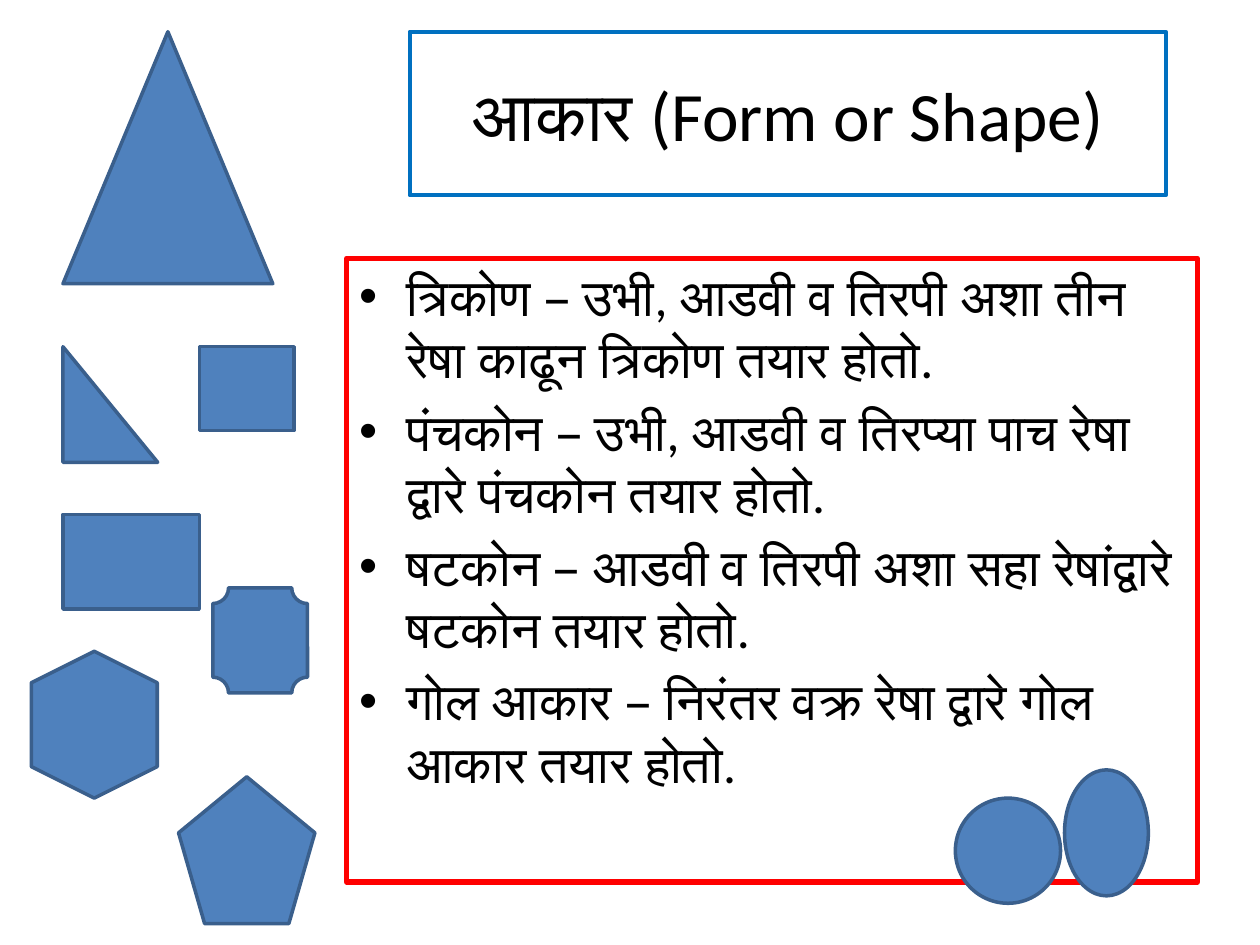
from lxml import etree
from pptx import Presentation
from pptx.dml.color import RGBColor
from pptx.enum import shapes, text
from pptx.oxml.ns import qn
from pptx.util import Cm, Pt

COLOURS = {
    "ink": "000000",
    "title_frame": "0070C0",
    "body_frame": "FF0000",
    "form": "4F81BD",
    "form_edge": "3A5F8C",
}
FONT = "Calibri"
INDENT = Cm(0.95)

HEADING = "आकार (Form or Shape)"
DEFINITIONS = [
    "त्रिकोण – उभी, आडवी व तिरपी अशा तीन रेषा काढून त्रिकोण तयार होतो.",
    "पंचकोन – उभी, आडवी व तिरप्या पाच रेषा द्वारे पंचकोन तयार होतो.",
    "षटकोन – आडवी व तिरपी अशा सहा रेषांद्वारे षटकोन तयार होतो.",
    "गोल आकार – निरंतर वक्र रेषा द्वारे गोल आकार तयार होतो.",
]

# Kind, left, top, width, height (cm), rotation
KIND = shapes.MSO_SHAPE
FORMS = [
    (KIND.ISOSCELES_TRIANGLE, 1.27, 0.64, 4.23, 5.08, 0),
    (KIND.RIGHT_TRIANGLE, 1.27, 6.99, 1.91, 2.33, 0),
    (KIND.RECTANGLE, 4.02, 6.99, 1.91, 1.69, 0),
    (KIND.RECTANGLE, 1.27, 10.37, 2.75, 1.91, 0),
    (KIND.REGULAR_PENTAGON, 3.6, 15.66, 2.75, 2.96, 0),
    (KIND.PLAQUE, 4.29, 11.85, 1.91, 2.12, 0),
    (KIND.HEXAGON, 0.42, 13.34, 2.96, 2.54, 90),
    (KIND.OVAL, 19.26, 16.09, 2.12, 2.12, 0),
    (KIND.OVAL, 21.46, 15.52, 1.69, 2.54, 0),
]


def rgb(name):
    return RGBColor.from_string(COLOURS[name])


def write(paragraph, words, size, colour="ink", align=None, before=0, spacing=None):
    run = paragraph.add_run()
    run.text = words
    run.font.name = FONT
    run.font.size = Pt(size)
    run.font.color.rgb = rgb(colour)
    paragraph.alignment = align
    paragraph.space_before = Pt(before)
    paragraph.line_spacing = spacing


class Deck:
    def __init__(self):
        self.prs = Presentation()
        self.prs.slide_width, self.prs.slide_height = Cm(25.4), Cm(19.05)
        self.slide = self.prs.slides.add_slide(self.prs.slide_layouts[5])

    def outline(self, shape, colour, width):
        shape.line.color.rgb = rgb(colour)
        shape.line.width = Pt(width)

    def title(self, words, left, top, width, height):
        heading = self.slide.shapes.title
        heading.left, heading.top = Cm(left), Cm(top)
        heading.width, heading.height = Cm(width), Cm(height)
        self.outline(heading, "title_frame", 2.25)
        heading.text_frame.vertical_anchor = text.MSO_ANCHOR.MIDDLE
        write(heading.text_frame.paragraphs[0], words, 39.6,
              align=text.PP_ALIGN.CENTER)

    def bullets(self, items, left, top, width, height):
        body = self.slide.shapes.add_textbox(Cm(left), Cm(top), Cm(width), Cm(height))
        self.outline(body, "body_frame", 3)
        frame = body.text_frame
        frame.word_wrap = True
        for number, item in enumerate(items):
            paragraph = frame.add_paragraph() if number else frame.paragraphs[0]
            write(paragraph, item, 29.6, align=text.PP_ALIGN.LEFT, before=6)
            props = paragraph._p.get_or_add_pPr()
            props.set("marL", str(INDENT))
            props.set("indent", str(-INDENT))
            etree.SubElement(props, qn("a:buFont"), typeface="Arial")
            etree.SubElement(props, qn("a:buChar"), char="•")

    def form(self, kind, left, top, width, height, rotation):
        figure = self.slide.shapes.add_shape(
            kind, Cm(left), Cm(top), Cm(width), Cm(height))
        figure.rotation = rotation
        figure.shadow.inherit = False
        figure.fill.solid()
        figure.fill.fore_color.rgb = rgb("form")
        self.outline(figure, "form_edge", 2)


def main():
    deck = Deck()
    # Heading and definitions
    deck.title(HEADING, 8.26, 0.64, 15.24, 3.3)
    deck.bullets(DEFINITIONS, 6.99, 5.21, 17.15, 12.57)
    # Example forms
    for form in FORMS:
        deck.form(*form)
    deck.prs.save("out.pptx")


if __name__ == "__main__":
    main()
